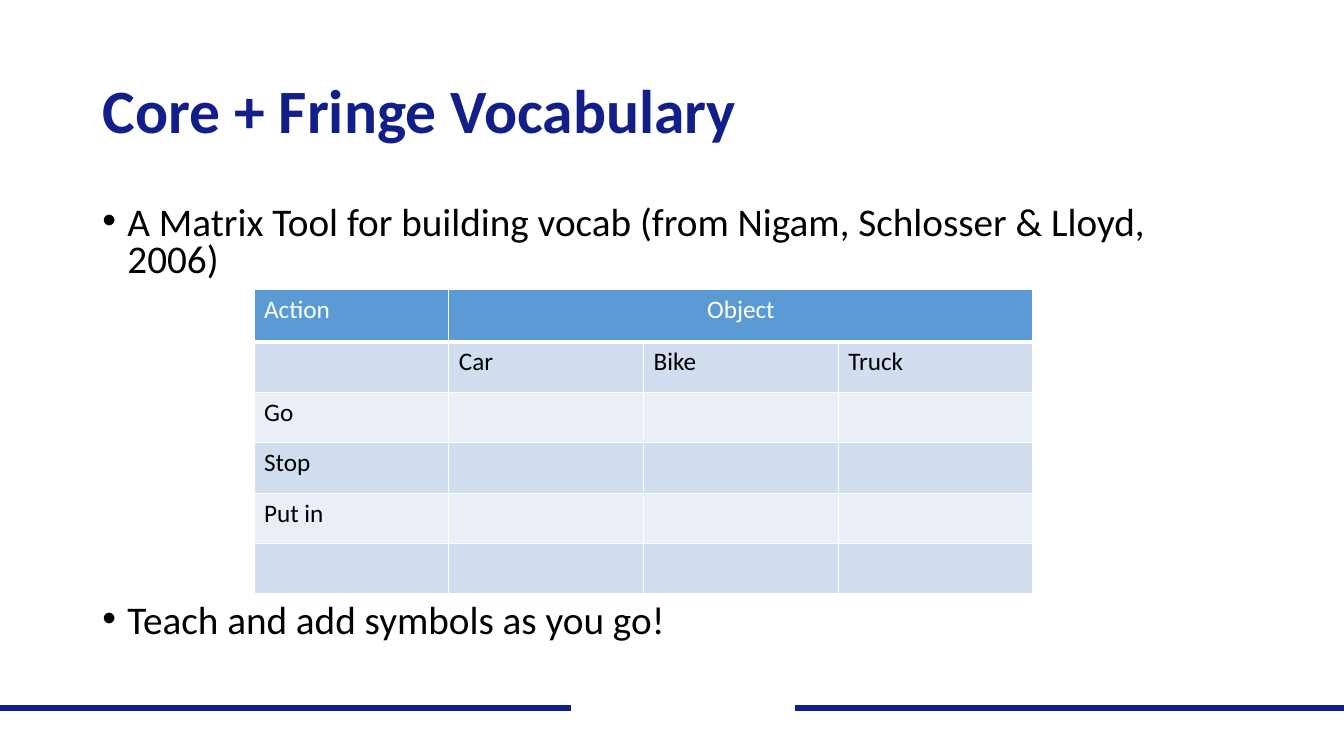
from dataclasses import dataclass

from lxml.etree import SubElement
from pptx import Presentation
from pptx.dml.color import RGBColor
from pptx.enum.shapes import MSO_CONNECTOR
from pptx.enum.text import MSO_ANCHOR, MSO_AUTO_SIZE, PP_ALIGN
from pptx.oxml.ns import qn
from pptx.util import Pt

NAVY, WHITE, BLACK = "121F88", "FFFFFF", "000000"
HEADER_FILL, DARK_BAND, LIGHT_BAND = "5B9BD5", "D2DEEF", "EAEFF7"
MARGIN, TEXT_WIDTH = 66, 828
RULE_Y = 505.5
COLUMN_WIDTH, HEADER_HEIGHT, ROW_HEIGHT = 139.1, 37.5, 36
VOCABULARY = [
    ["Action", "Object", "", ""],
    ["", "Car", "Bike", "Truck"],
    ["Go", "", "", ""],
    ["Stop", "", "", ""],
    ["Put in", "", "", ""],
    ["", "", "", ""],
]


@dataclass
class Rule:
    start: float
    end: float
    color: str


@dataclass
class Bullet:
    text: str
    space_before: float


RULES = [Rule(0, 960, NAVY), Rule(408, 568, WHITE)]
BULLETS = [
    Bullet("A Matrix Tool for building vocab (from Nigam, Schlosser & Lloyd, 2006)", 0),
    Bullet("Teach and add symbols as you go!", 230.5),  # leaves room for the table
]


def rgb(color: str) -> RGBColor:
    return RGBColor.from_string(color)


def add_run(p, text: str, size: float, color: str, bold: bool = False) -> None:
    r = p.add_run()
    r.text = text
    r.font.name = "Calibri"
    r.font.size = Pt(size)
    r.font.bold = bold
    r.font.color.rgb = rgb(color)


def add_rule(s, rule: Rule) -> None:
    line = s.shapes.add_connector(
        MSO_CONNECTOR.STRAIGHT, Pt(rule.start), Pt(RULE_Y), Pt(rule.end), Pt(RULE_Y))
    line.line.color.rgb = rgb(rule.color)
    line.line.width = Pt(4.5)
    SubElement(line._element.spPr, qn("a:effectLst"))


def format_title(s, text: str) -> None:
    title = s.shapes.title
    title.left, title.top = Pt(MARGIN), Pt(28.75)
    title.width, title.height = Pt(TEXT_WIDTH), Pt(104.4)
    tf = title.text_frame
    tf.word_wrap = True
    tf.auto_size = MSO_AUTO_SIZE.NONE
    tf.vertical_anchor = MSO_ANCHOR.MIDDLE
    p = tf.paragraphs[0]
    p.alignment = PP_ALIGN.LEFT
    p.line_spacing = 0.9
    add_run(p, text, 44, NAVY, bold=True)


def add_bullets(s, bullets: list[Bullet]) -> None:
    box = s.shapes.add_textbox(Pt(MARGIN), Pt(143.75), Pt(TEXT_WIDTH), Pt(342.6))
    tf = box.text_frame
    tf.word_wrap = True
    for i, bullet in enumerate(bullets):
        p = tf.add_paragraph() if i else tf.paragraphs[0]
        p.line_spacing = 0.8
        p.space_before = Pt(bullet.space_before)
        pPr = p._p.get_or_add_pPr()
        pPr.set("marL", str(Pt(18)))
        pPr.set("indent", str(Pt(-18)))
        SubElement(pPr, qn("a:buFont"), typeface="Arial")
        SubElement(pPr, qn("a:buChar"), char="•")
        add_run(p, bullet.text, 28, BLACK)


def add_borders(cell, bottom: float) -> None:
    """Draw white cell edges, 1 pt wide except for the bottom one."""
    tcPr = cell._tc.get_or_add_tcPr()
    for edge, width in {"L": 1, "R": 1, "T": 1, "B": bottom}.items():
        ln = SubElement(tcPr, qn(f"a:ln{edge}"), w=str(Pt(width)))
        SubElement(SubElement(ln, qn("a:solidFill")), qn("a:srgbClr"), val=WHITE)


def add_vocabulary_table(s, rows: list[list[str]]) -> None:
    columns = len(rows[0])
    height = HEADER_HEIGHT + ROW_HEIGHT * (len(rows) - 1)
    table = s.shapes.add_table(
        len(rows), columns, Pt(181.5), Pt(206.75),
        Pt(COLUMN_WIDTH * columns), Pt(height)).table
    for column in table.columns:
        column.width = Pt(COLUMN_WIDTH)
    for i, texts in enumerate(rows):
        header = i == 0
        table.rows[i].height = Pt(HEADER_HEIGHT if header else ROW_HEIGHT)
        fill = HEADER_FILL if header else DARK_BAND if i % 2 else LIGHT_BAND
        for j, text in enumerate(texts):
            cell = table.cell(i, j)
            add_borders(cell, 3 if header else 1)
            cell.fill.solid()
            cell.fill.fore_color.rgb = rgb(fill)
            if text:
                add_run(cell.text_frame.paragraphs[0], text, 18, WHITE if header else BLACK)
    table.cell(0, 1).merge(table.cell(0, columns - 1))
    table.cell(0, 1).text_frame.paragraphs[0].alignment = PP_ALIGN.CENTER


def main() -> None:
    prs = Presentation()
    prs.slide_width, prs.slide_height = Pt(960), Pt(540)
    s = prs.slides.add_slide(prs.slide_layouts.get_by_name("Title Only"))
    for rule in RULES:
        add_rule(s, rule)
    format_title(s, "Core + Fringe Vocabulary")
    add_bullets(s, BULLETS)
    add_vocabulary_table(s, VOCABULARY)
    prs.save("out.pptx")


if __name__ == "__main__":
    main()
